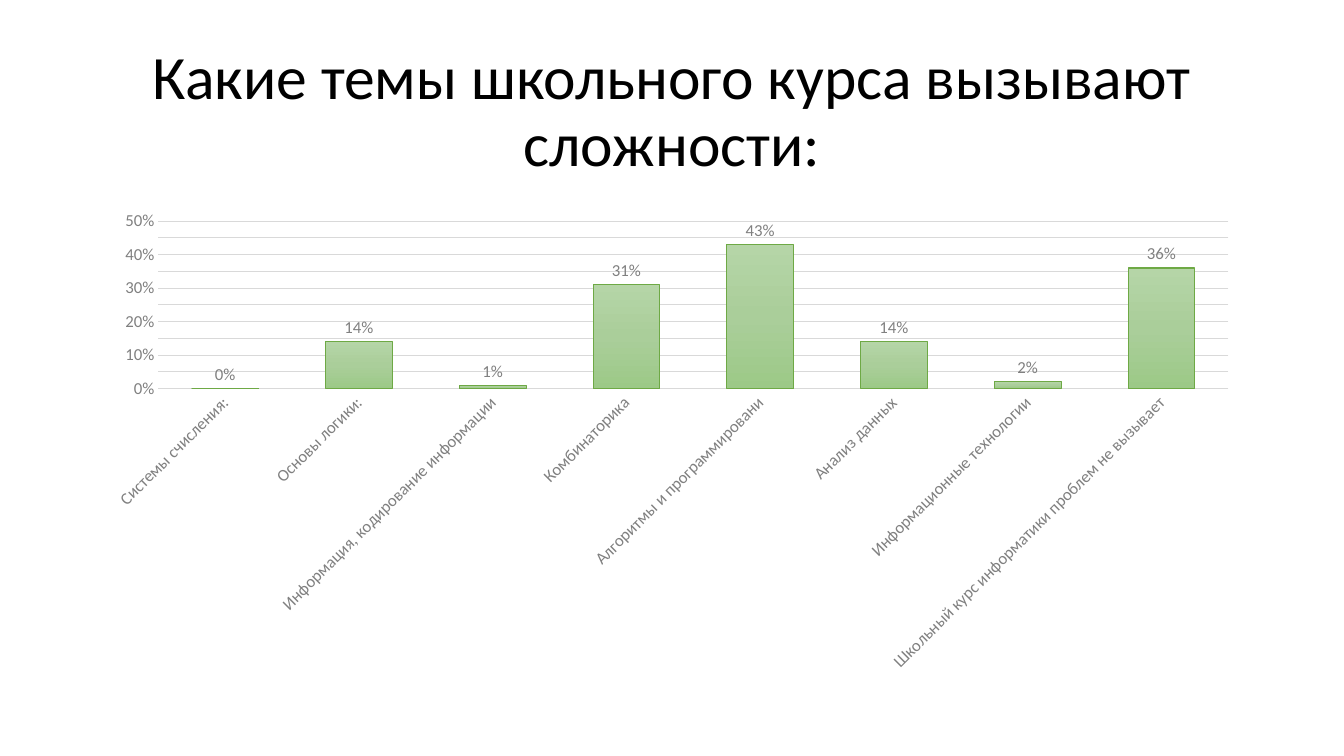
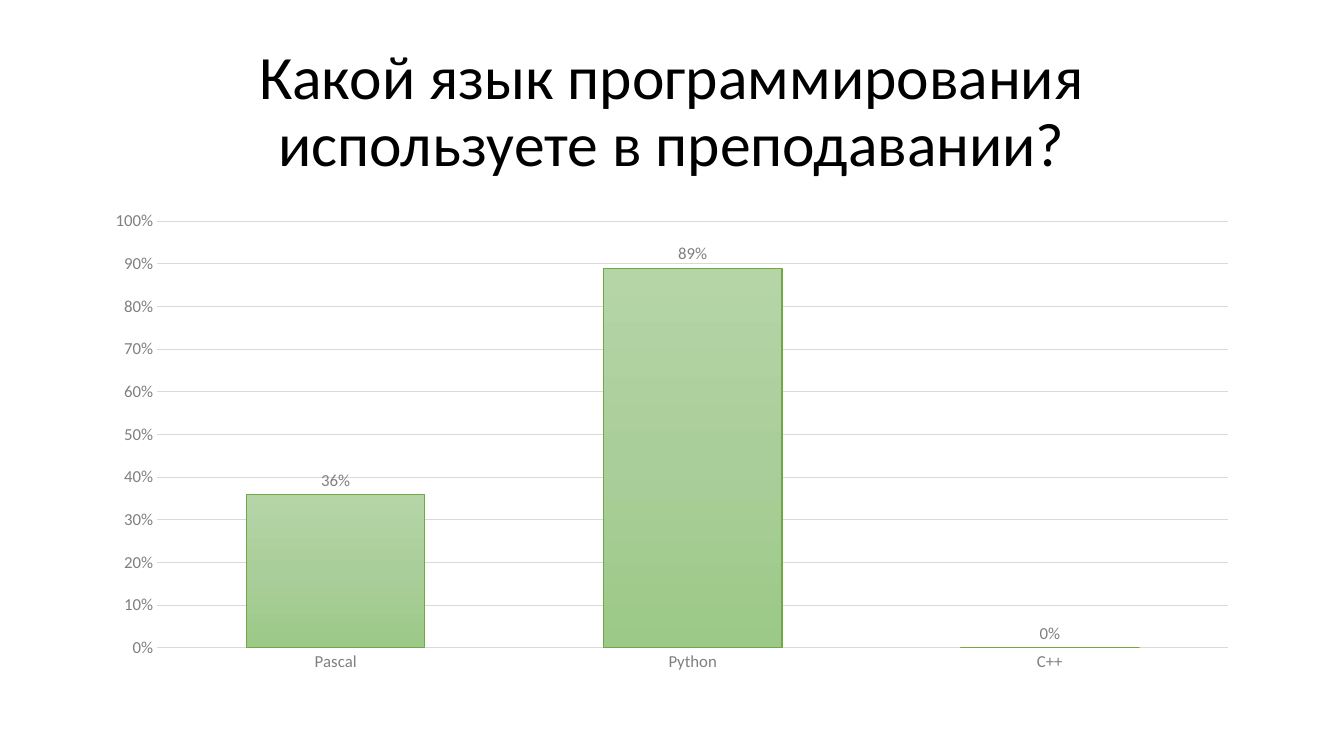
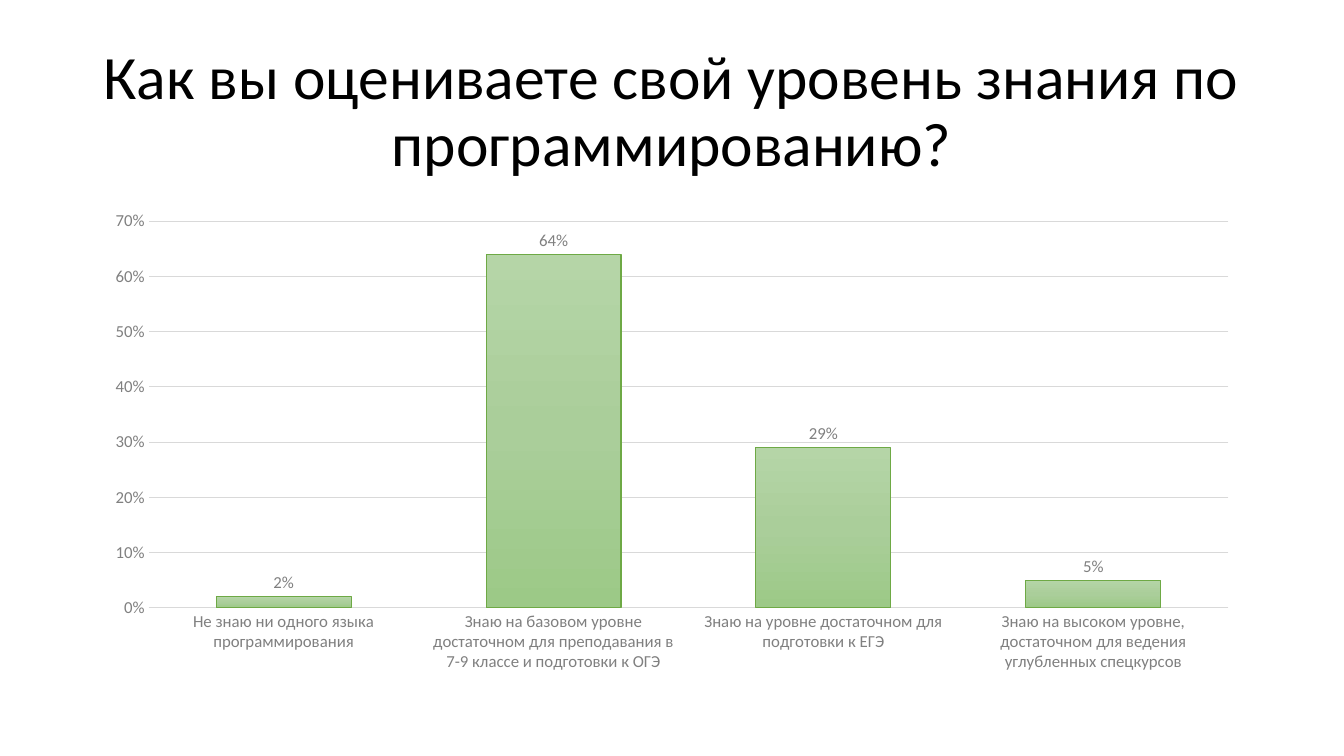
from copy import deepcopy
from dataclasses import dataclass

from pptx import Presentation
from pptx.chart.data import CategoryChartData
from pptx.dml.color import RGBColor
from pptx.enum.chart import XL_CHART_TYPE, XL_LABEL_POSITION, XL_TICK_MARK
from pptx.enum.text import MSO_ANCHOR, PP_ALIGN
from pptx.oxml.ns import qn
from pptx.util import Cm, Pt


@dataclass(frozen=True)
class Theme:
    font: str = "Calibri"
    title_color: RGBColor = RGBColor.from_string("000000")
    label_color: RGBColor = RGBColor.from_string("808080")
    grid_color: RGBColor = RGBColor.from_string("D9D9D9")
    bar_line: RGBColor = RGBColor.from_string("6EA945")
    bar_stops: tuple = ("B5D5A7", "AACE9A", "9CC987")
    title_size: Pt = Pt(44)
    chart_size: Pt = Pt(10)
    label_size: Pt = Pt(12)
    thin: Pt = Pt(0.75)


class SurveyDeck:
    left = Cm(2.33)
    width = Cm(29.21)

    def __init__(self, theme):
        self.theme = theme
        self.deck = Presentation()
        self.deck.slide_width = Cm(33.87)
        self.deck.slide_height = Cm(19.05)
        self.page = None

    def add_page(self):
        self.page = self.deck.slides.add_slide(self.deck.slide_layouts[6])

    def style_font(self, font, size, color):
        font.name = self.theme.font
        font.size = size
        font.color.rgb = color

    def style_line(self, line, color):
        line.width = self.theme.thin
        line.color.rgb = color

    def add_title(self, text):
        box = self.page.shapes.add_textbox(self.left, Cm(1.01), self.width, Cm(3.68))
        frame = box.text_frame
        frame.word_wrap = True
        frame.vertical_anchor = MSO_ANCHOR.MIDDLE
        para = frame.paragraphs[0]
        para.text = text
        para.alignment = PP_ALIGN.CENTER
        para.line_spacing = 0.9
        self.style_font(para.font, self.theme.title_size, self.theme.title_color)

    def add_bar_chart(self, answers, maximum, step):
        data = CategoryChartData(number_format="0%")
        data.categories = list(answers)
        data.add_series("Series 1", list(answers.values()))
        chart = self.page.shapes.add_chart(
            XL_CHART_TYPE.COLUMN_CLUSTERED,
            self.left, Cm(5.08), self.width, Cm(12.09), data,
        ).chart
        chart.has_title = False
        chart.has_legend = False
        self.style_font(chart.font, self.theme.chart_size, self.theme.title_color)
        self.style_axes(chart, maximum, step)
        self.style_bars(chart.plots[0])

    def style_axes(self, chart, maximum, step):
        categories, values = chart.category_axis, chart.value_axis
        for axis in (categories, values):
            axis.major_tick_mark = XL_TICK_MARK.NONE
            axis.minor_tick_mark = XL_TICK_MARK.NONE
            self.style_font(axis.tick_labels.font, self.theme.label_size, self.theme.label_color)
            body = axis._element.find(qn("c:txPr")).find(qn("a:bodyPr"))
            body.set("rot", "-60000000")
            body.set("vert", "horz")
        self.style_line(categories.format.line, self.theme.grid_color)
        values.format.line.fill.background()
        values.minimum_scale = 0
        values.maximum_scale = maximum
        values.major_unit = step
        values.tick_labels.number_format = "0%"
        values.tick_labels.number_format_is_linked = False
        self.style_line(values.major_gridlines.format.line, self.theme.grid_color)

    def style_bars(self, plot):
        plot.gap_width = 100
        plot.overlap = -24
        plot.vary_by_categories = False
        series = plot.series[0]
        series.invert_if_negative = False
        self.style_line(series.format.line, self.theme.bar_line)

        fill = series.format.fill
        fill.gradient()
        fill.gradient_angle = 270
        stop_list = next(series._element.iter(qn("a:gsLst")))
        stop_list.insert(1, deepcopy(stop_list[0]))
        last = len(self.theme.bar_stops) - 1
        for index, color in enumerate(self.theme.bar_stops):
            stop = fill.gradient_stops[index]
            stop.position = index / last
            stop.color.rgb = RGBColor.from_string(color)

        labels = series.data_labels
        labels.show_value = True
        labels.position = XL_LABEL_POSITION.OUTSIDE_END
        labels.number_format = "0%"
        labels.number_format_is_linked = False
        self.style_font(labels.font, self.theme.label_size, self.theme.label_color)


QUESTIONS = [
    (
        "Какие темы школьного курса вызывают сложности:",
        {
            "Системы счисления:": 0,
            "Основы логики:": 0.14,
            "Информация, кодирование информации": 0.01,
            "Комбинаторика": 0.31,
            "Алгоритмы и программировани": 0.43,
            "Анализ данных": 0.14,
            "Информационные технологии": 0.02,
            "Школьный курс информатики проблем не вызывает": 0.36,
        },
        0.5,
        0.05,
    ),
    (
        "Какой язык программирования используете в преподавании?",
        {"Pascal": 0.36, "Python": 0.89, "С++": 0},
        1,
        0.1,
    ),
    (
        "Как вы оцениваете свой уровень знания по программированию?",
        {
            "Не знаю ни одного языка программирования": 0.02,
            "Знаю на базовом уровне достаточном для преподавания в 7-9 классе и подготовки к ОГЭ": 0.64,
            "Знаю на уровне достаточном для подготовки к ЕГЭ": 0.29,
            "Знаю на высоком уровне, достаточном для ведения углубленных спецкурсов": 0.05,
        },
        0.7,
        0.1,
    ),
]


def main():
    survey = SurveyDeck(Theme())
    for title, answers, maximum, step in QUESTIONS:
        survey.add_page()
        survey.add_title(title)
        survey.add_bar_chart(answers, maximum, step)
    survey.deck.save("out.pptx")


if __name__ == "__main__":
    main()
